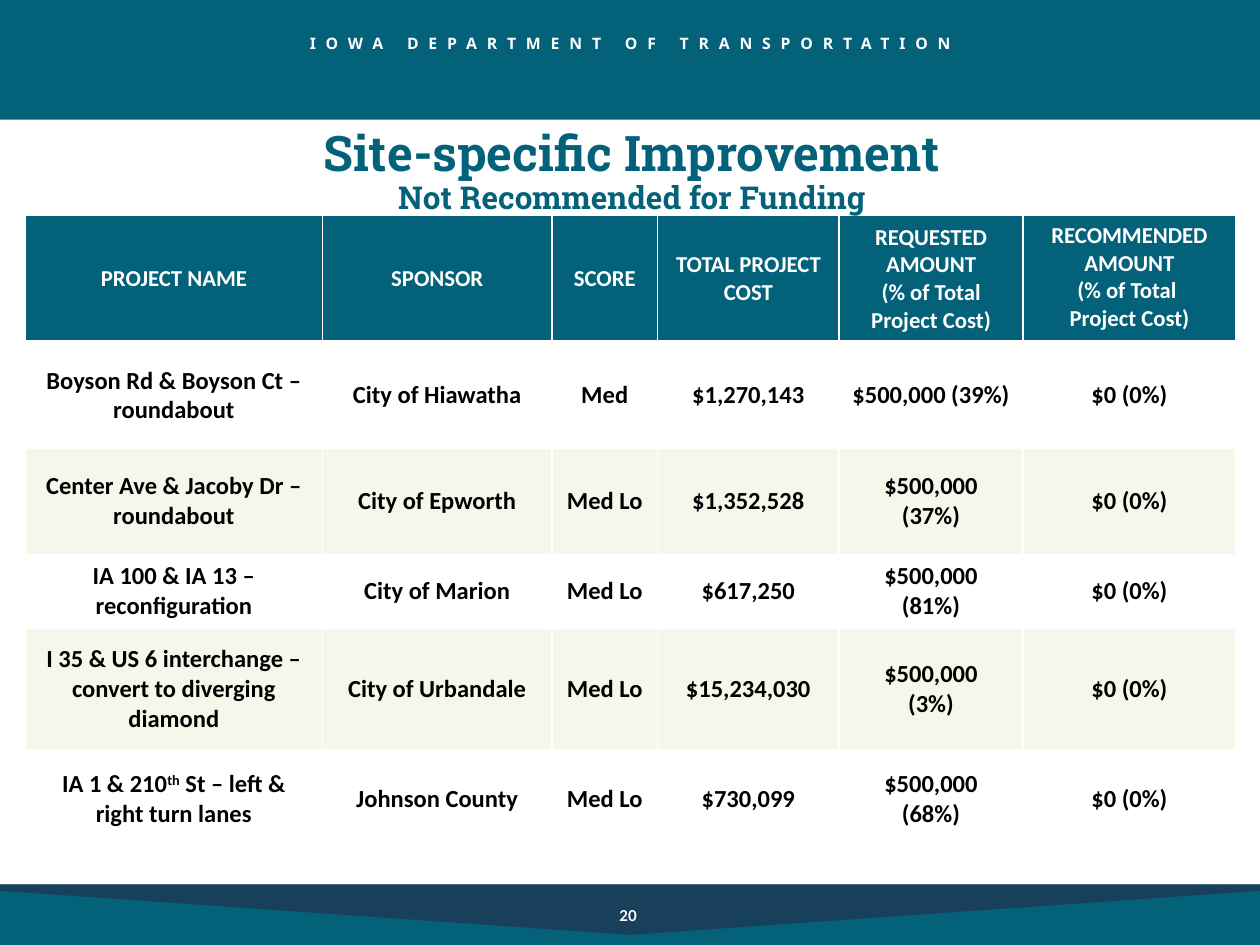
from lxml import etree
from pptx import Presentation
from pptx import util as u
from pptx.dml.color import RGBColor
from pptx.enum import shapes, text
from pptx.oxml import ns

TEAL = RGBColor(0x03, 0x61, 0x7A)
NAVY = RGBColor(0x19, 0x40, 0x5B)
CREAM = RGBColor(0xF5, 0xF7, 0xEB)
WHITE = RGBColor(255, 255, 255)
BLACK = RGBColor(0, 0, 0)

HEAD = ["PROJECT NAME", "SPONSOR", "SCORE", "TOTAL PROJECT COST",
        "REQUESTED AMOUNT\n(% of Total Project Cost)",
        "RECOMMENDED AMOUNT\n(% of Total \vProject Cost)"]
ROWS = [
    ["Boyson Rd & Boyson Ct – roundabout", "City of Hiawatha", "Med",
     "$1,270,143", "$500,000 (39%)"],
    ["Center Ave & Jacoby Dr – roundabout", "City of Epworth", "Med Lo",
     "$1,352,528", "$500,000\n(37%)"],
    ["IA 100 & IA 13 – reconfiguration", "City of Marion", "Med Lo",
     "$617,250", "$500,000\n(81%)"],
    ["I 35 & US 6 interchange – convert to diverging diamond",
     "City of Urbandale", "Med Lo", "$15,234,030", "$500,000\n(3%)"],
    [("IA 1 & 210", "th", " St – left & right turn lanes"),
     "Johnson County", "Med Lo", "$730,099", "$500,000\n(68%)"],
]
GRANT = "$0 (0%)"
WIDTHS = [2.36, 1.82, 0.84, 1.44, 1.46, 1.69]
HEIGHTS = [1.01, 0.84, 0.84, 0.59, 0.96, 0.79]
TITLE = [("Site-specific Improvement", 28), ("Not Recommended for Funding", 18)]

deck = Presentation()
deck.slide_width, deck.slide_height = u.Inches(10), u.Inches(7.5)
slide = deck.slides.add_slide(deck.slide_layouts[6])


def paint(shape, color):
    shape.shadow.inherit = False
    shape.fill.solid()
    shape.fill.fore_color.rgb = color
    shape.line.fill.background()


def style(par, size, face, color):
    par.alignment = text.PP_ALIGN.CENTER
    font = par.font
    font.size, font.name, font.bold = u.Pt(size), face, True
    font.color.rgb = color


def label(box, lines, face, color, anchor=text.MSO_ANCHOR.MIDDLE):
    frame = slide.shapes.add_textbox(*map(u.Inches, box)).text_frame
    frame.word_wrap = True
    frame.vertical_anchor = anchor
    frame.text = "\n".join(line for line, size in lines)
    for par, (line, size) in zip(frame.paragraphs, lines):
        style(par, size, face, color)
    return frame


def border(cell, last):
    props = cell._tc.get_or_add_tcPr()
    for spot, (side, points) in enumerate([("L", 1), ("R", 1), ("T", 1), ("B", last)]):
        line = etree.Element(ns.qn("a:ln" + side), w=str(u.Pt(points)))
        fill = etree.SubElement(line, ns.qn("a:solidFill"))
        etree.SubElement(fill, ns.qn("a:srgbClr"), val=str(WHITE))
        props.insert(spot, line)


def write(cell, words):
    if isinstance(words, str):
        cell.text = words
        return
    par = cell.text_frame.paragraphs[0]
    for part in words:
        run = par.add_run()
        run.text = part
        if part == "th":
            run._r.get_or_add_rPr().set("baseline", "30000")


for top, tall in [(0, 0.95), (7.02, 0.48)]:
    band = slide.shapes.add_shape(shapes.MSO_SHAPE.RECTANGLE, 0, u.Inches(top),
                                  deck.slide_width, u.Inches(tall))
    paint(band, TEAL)

pen = slide.shapes.build_freeform(0, u.Inches(7.02))
pen.add_line_segments([(u.Inches(x), u.Inches(y)) for x, y in
                       [(10, 7.02), (10, 7.07), (5, 7.42), (0, 7.07)]])
paint(pen.convert_to_shape(), NAVY)

agency = label((0, 0.22, 10, 0.25), [("IOWA DEPARTMENT OF TRANSPORTATION", 9)],
               "Noto Sans", WHITE, text.MSO_ANCHOR.TOP)
agency.paragraphs[0].runs[0]._r.get_or_add_rPr().set("spc", "560")
label((3.86, 7.15, 2.25, 0.23), [("20", 8.6)], "Lato", WHITE)

grid = slide.shapes.add_table(len(HEIGHTS), len(WIDTHS), u.Inches(0.2), u.Inches(1.71),
                              u.Inches(sum(WIDTHS)), u.Inches(sum(HEIGHTS))).table
for col, wide in zip(grid.columns, WIDTHS):
    col.width = u.Inches(wide)
for row, tall in zip(grid.rows, HEIGHTS):
    row.height = u.Inches(tall)

for r, row in enumerate([HEAD] + [row + [GRANT] for row in ROWS]):
    for c, words in enumerate(row):
        cell = grid.cell(r, c)
        write(cell, words)
        cell.vertical_anchor = text.MSO_ANCHOR.MIDDLE
        for par in cell.text_frame.paragraphs:
            style(par, 14 if r else 13, "Calibri", BLACK if r else WHITE)
        if r % 2:
            cell.fill.background()
        else:
            cell.fill.solid()
            cell.fill.fore_color.rgb = CREAM if r else TEAL
        border(cell, 1 if r else 3)
grid.cell(0, len(WIDTHS) - 1).vertical_anchor = text.MSO_ANCHOR.TOP

title = label((0.23, 1.11, 9.57, 0.52), TITLE, "Roboto Slab", TEAL)
for par in title.paragraphs:
    par.line_spacing = 0.9

deck.save("out.pptx")
